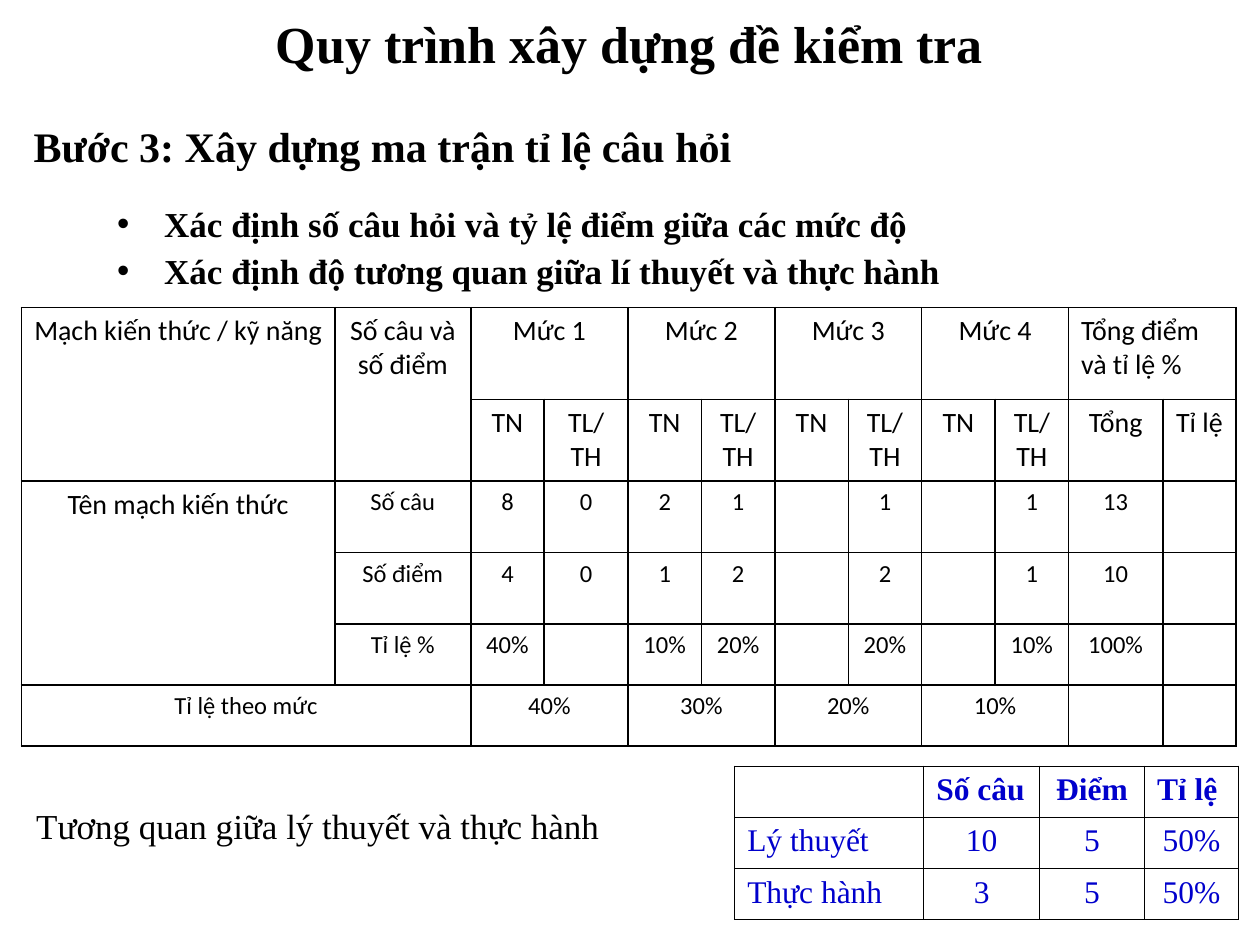
from lxml import etree
from pptx import Presentation
from pptx.dml.color import RGBColor
from pptx.enum.text import MSO_ANCHOR, PP_ALIGN
from pptx.oxml.ns import qn
from pptx.util import Cm, Pt

LEFT, CENTER, JUSTIFY = PP_ALIGN.LEFT, PP_ALIGN.CENTER, PP_ALIGN.JUSTIFY
MIDDLE = MSO_ANCHOR.MIDDLE
COLORS = {"text": "000000", "accent": "0000CC", "paper": "FFFFFF", "border": "000000"}
SERIF, SANS = "Times New Roman", "Calibri"
TITLE_ONLY = 5

LEVELS = 4
MATRIX_COLUMNS = [6.32, 2.74, 1.48, 1.69] + [1.48] * 6 + [1.9, 1.48]
MATRIX_ROWS = [1.85, 1.65, 1.44, 1.44, 1.23, 1.23]
MATRIX = [
    ["Mạch kiến thức / kỹ năng", "Số câu và số điểm", "Mức 1", "", "Mức 2", "",
     "Mức 3", "", "Mức 4", "", "Tổng điểm và tỉ lệ %", ""],
    ["", ""] + ["TN", "TL/TH"] * LEVELS + ["Tổng", "Tỉ lệ"],
    ["Tên mạch kiến thức", "Số câu", "8", "0", "2", "1", "", "1", "", "1", "13", ""],
    ["", "Số điểm", "4", "0", "1", "2", "", "2", "", "1", "10", ""],
    ["", "Tỉ lệ %", "40%", "", "10%", "20%", "", "20%", "", "10%", "100%", ""],
    ["Tỉ lệ theo mức", "", "40%", "", "30%", "", "20%", "", "10%", "", "", ""],
]
MATRIX_MERGES = [(0, 0, 1, 0), (0, 1, 1, 1), (2, 0, 4, 0), (5, 0, 5, 1), (0, 10, 0, 11)]
MATRIX_MERGES += [(row, column, row, column + 1)
                  for row in (0, 5) for column in range(2, 2 + 2 * LEVELS, 2)]

BALANCE_COLUMNS = [3.81, 2.34, 2.11, 1.9]
BALANCE_ROWS = [1.03] * 3
BALANCE = [
    ["", "Số câu", "Điểm", "Tỉ lệ"],
    ["Lý thuyết", "10", "5", "50%"],
    ["Thực hành", "3", "5", "50%"],
]


def write(frame, *lines, size, font=SERIF, color="text", bold=False, align=LEFT,
          space_before=0, line_spacing=None, bullet_indent=None):
    frame.word_wrap = True
    for index, line in enumerate(lines):
        paragraph = frame.paragraphs[0] if index == 0 else frame.add_paragraph()
        paragraph.alignment = align
        paragraph.space_before = Pt(space_before)
        if line_spacing:
            paragraph.line_spacing = line_spacing
        if bullet_indent:
            properties = paragraph._p.get_or_add_pPr()
            properties.set("marL", str(Cm(bullet_indent)))
            properties.set("indent", str(-Cm(bullet_indent)))
            etree.SubElement(properties, qn("a:buFont")).set("typeface", "Arial")
            etree.SubElement(properties, qn("a:buChar")).set("char", "•")
        run = paragraph.add_run()
        run.text = line
        run.font.size = Pt(size)
        run.font.name = font
        run.font.bold = bold
        run.font.color.rgb = RGBColor.from_string(COLORS[color])


def add_text(slide, box, *lines, **text_format):
    shape = slide.shapes.add_textbox(*map(Cm, box))
    write(shape.text_frame, *lines, **text_format)


def draw_borders(cell):
    properties = cell._tc.get_or_add_tcPr()
    for position, side in enumerate(("a:lnL", "a:lnR", "a:lnT", "a:lnB")):
        line = etree.Element(qn(side), w=str(Pt(1)))
        fill = etree.SubElement(line, qn("a:solidFill"))
        etree.SubElement(fill, qn("a:srgbClr")).set("val", COLORS["border"])
        properties.insert(position, line)


def add_grid(slide, left, top, columns, rows, values, cell_format, merges=(), fill=None):
    frame = slide.shapes.add_table(len(rows), len(columns), Cm(left), Cm(top),
                                   Cm(sum(columns)), Cm(sum(rows)))
    table = frame.table
    table.first_row = table.horz_banding = False
    for column, width in zip(table.columns, columns):
        column.width = Cm(width)
    for row, height in zip(table.rows, rows):
        row.height = Cm(height)
    for row, texts in enumerate(values):
        for column, text in enumerate(texts):
            cell = table.cell(row, column)
            if fill:
                cell.fill.solid()
                cell.fill.fore_color.rgb = RGBColor.from_string(COLORS[fill])
            else:
                cell.fill.background()
            draw_borders(cell)
            if text:
                write(cell.text_frame, text, **cell_format(row, column))
    for top_row, first, bottom_row, last in merges:
        table.cell(top_row, first).merge(table.cell(bottom_row, last))


def matrix_format(row, column):
    large = row < 2 or (row, column) == (2, 0)
    return {"size": 16 if large else 14, "font": SANS,
            "align": LEFT if (row, column) == (0, 10) else CENTER}


def balance_format(row, column):
    left_aligned = column == 0 or (row == 0 and column != 2)
    return {"size": 18, "color": "accent", "bold": row == 0,
            "align": LEFT if left_aligned else CENTER}


def add_heading(slide, left, top, width):
    title = slide.shapes.title
    title.left, title.top = Cm(left + 1.32), Cm(top)
    title.width, title.height = Cm(width - 2.87), Cm(1.48)
    title.text_frame.vertical_anchor = MIDDLE
    write(title.text_frame, "Quy trình xây dựng đề kiểm tra", size=29.7, bold=True,
          align=CENTER, line_spacing=0.9)
    add_text(slide, (left, top + 2.11, width, 1.27),
             "Bước 3: Xây dựng ma trận tỉ lệ câu hỏi", size=24, bold=True)
    add_text(slide, (left + 1.68, top + 3.76, 17.37, 2.34),
             "Xác định số câu hỏi và tỷ lệ điểm giữa các mức độ",
             "Xác định độ tương quan giữa lí thuyết và thực hành",
             size=20, bold=True, align=JUSTIFY, space_before=3, bullet_indent=0.95)


def add_balance(slide, left, top):
    add_text(slide, (left, top + 0.64, 12.7, 1.47),
             "Tương quan giữa lý thuyết và thực hành",
             size=20, align=JUSTIFY, space_before=3)
    add_grid(slide, left + 14.33, top, BALANCE_COLUMNS, BALANCE_ROWS, BALANCE,
             balance_format, fill="paper")


def main():
    presentation = Presentation()
    presentation.slide_width, presentation.slide_height = Cm(25.4), Cm(19.05)
    slide = presentation.slides.add_slide(presentation.slide_layouts[TITLE_ONLY])
    add_heading(slide, 0.43, 0.2, 24.77)
    add_grid(slide, 0.43, 6.2, MATRIX_COLUMNS, MATRIX_ROWS, MATRIX,
             matrix_format, MATRIX_MERGES)
    add_balance(slide, 0.48, 15.45)
    presentation.save("out.pptx")


if __name__ == "__main__":
    main()
